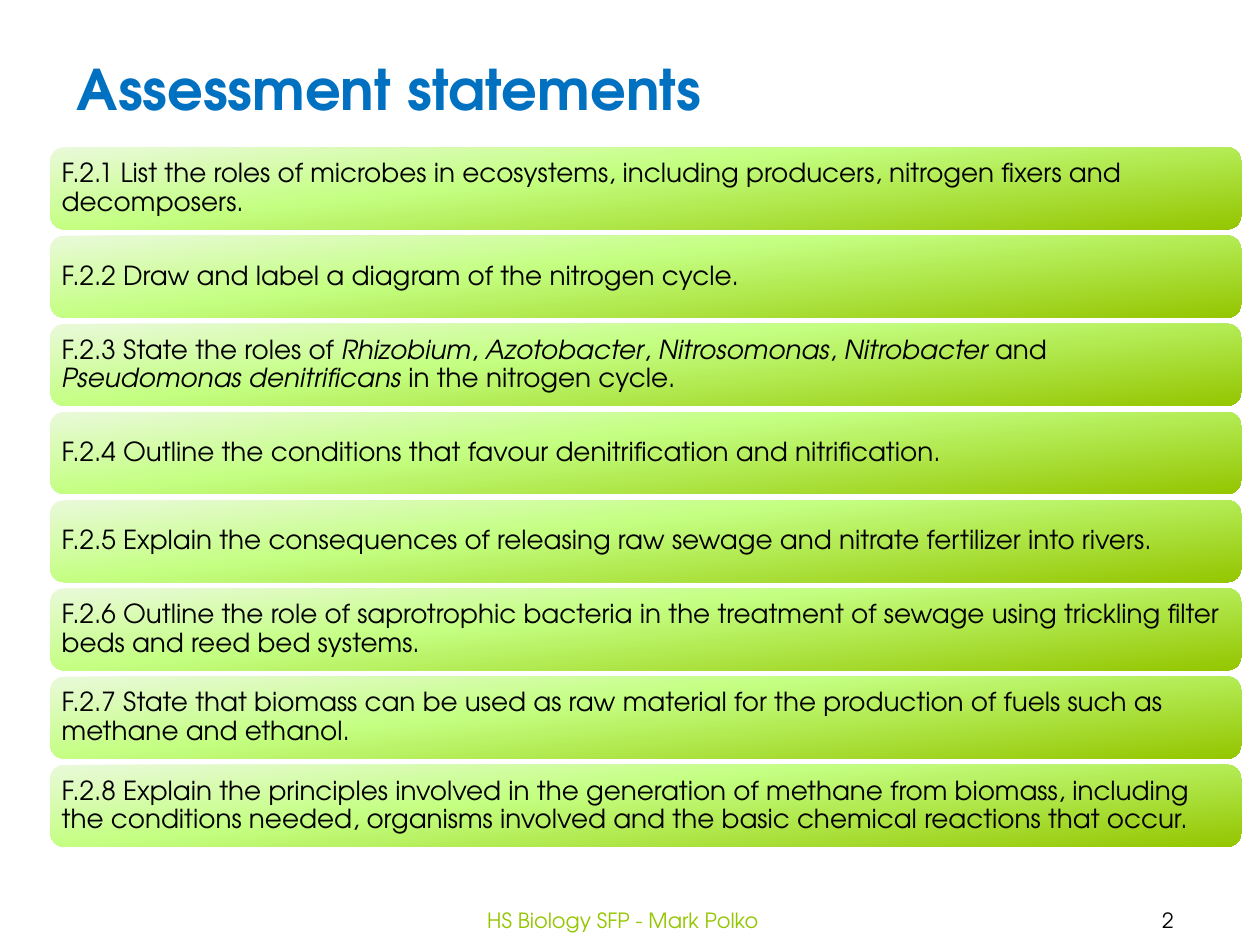
from lxml.etree import SubElement
from pptx import Presentation
from pptx.dml.color import RGBColor
from pptx.enum.shapes import MSO_SHAPE as Shape
from pptx.enum.text import MSO_ANCHOR as Anchor, MSO_AUTO_SIZE as AutoSize, PP_ALIGN as Align
from pptx.oxml.ns import qn
from pptx.util import Inches, Pt

FONT = "TeX Gyre Adventor"
BLACK = RGBColor(0x00, 0x00, 0x00)
BLUE = RGBColor(0x00, 0x70, 0xC0)
PALE = RGBColor(0xEA, 0xF9, 0xDA)
LIME = RGBColor(0xC4, 0xFF, 0x82)
GREEN = RGBColor(0x94, 0xC6, 0x00)
GRADIENT = [(0, PALE), (40, LIME), (100, GREEN)]
GRADIENT_ANGLE = 84  # degrees, clockwise

# Grid of the statement bars, in inches
LEFT, TOP, WIDTH, HEIGHT, PITCH = 0.4, 1.17, 9.45, 0.65, 0.7
INSET = 0.03

# Each statement is a list of runs; every second run is italic
STATEMENTS = [
    ["F.2.1 List the roles of microbes in ecosystems, including producers, "
     "nitrogen fixers and decomposers."],
    ["F.2.2 Draw and label a diagram of the nitrogen cycle."],
    ["F.2.3 State the roles of ", "Rhizobium", ", ", "Azotobacter", ", ",
     "Nitrosomonas", ", ", "Nitrobacter ", "and ",
     "Pseudomonas denitrificans ", "in the nitrogen cycle."],
    ["F.2.4 Outline the conditions that favour denitrification and nitrification."],
    ["F.2.5 Explain the consequences of releasing raw sewage and nitrate "
     "fertilizer into rivers."],
    ["F.2.6 Outline the role of saprotrophic bacteria in the treatment of sewage "
     "using trickling filter beds and reed bed systems."],
    ["F.2.7 State that biomass can be used as raw material for the production of "
     "fuels such as methane and ethanol."],
    ["F.2.8 Explain the principles involved in the generation of methane from "
     "biomass, including the conditions needed, organisms involved and the basic "
     "chemical reactions that occur."],
]


def add_run(para, text, size, color, bold=False, italic=False):
    span = para.add_run()
    span.text = text
    font = span.font
    font.name, font.size, font.bold, font.italic = FONT, Pt(size), bold, italic
    font.color.rgb = color


def add_box(shapes, left, top, width, height, anchor=Anchor.MIDDLE):
    box = shapes.add_textbox(*map(Inches, (left, top, width, height)))
    box.text_frame.word_wrap = True
    box.text_frame.vertical_anchor = anchor
    return box.text_frame


def add_title(page, text):
    frame = add_box(page.shapes, 0.51, 0.38, 5.22, 0.64, Anchor.TOP)
    frame.word_wrap = False
    frame.auto_size = AutoSize.SHAPE_TO_FIT_TEXT
    add_run(frame.paragraphs[0], text, 32, BLUE, bold=True)


def add_footer(page, left, width, text, color):
    para = add_box(page.shapes, left, 7.1, width, 0.4).paragraphs[0]
    para.alignment = Align.CENTER
    add_run(para, text, 12, color)


def fill_gradient(shape):
    shape.fill.gradient()
    shape.fill.gradient_angle = 360 - GRADIENT_ANGLE
    stops = shape.fill._fill._gradFill.find(qn("a:gsLst"))
    for stop in list(stops):
        stops.remove(stop)
    for percent, color in GRADIENT:
        stop = SubElement(stops, qn("a:gs"), pos=str(percent * 1000))
        SubElement(stop, qn("a:srgbClr"), val=str(color))


def add_statement(shapes, row, runs):
    top = TOP + row * PITCH
    bar = shapes.add_shape(Shape.ROUNDED_RECTANGLE,
                           *map(Inches, (LEFT, top, WIDTH, HEIGHT)))
    bar.shadow.inherit = False
    bar.line.fill.background()
    fill_gradient(bar)

    frame = add_box(shapes, LEFT + INSET, top + INSET,
                    WIDTH - 2 * INSET, HEIGHT - 2 * INSET)
    frame.margin_left = frame.margin_right = Inches(0.06)
    frame.margin_top = frame.margin_bottom = Inches(0.06)
    para = frame.paragraphs[0]
    para.line_spacing = 0.9
    for index, text in enumerate(runs):
        add_run(para, text, 15, BLACK, italic=index % 2 == 1)


def main():
    deck = Presentation()
    deck.slide_width, deck.slide_height = Inches(10), Inches(7.5)
    page = deck.slides.add_slide(deck.slide_layouts[6])

    # Page number, footer and title
    add_footer(page, 8.54, 1.46, "2", BLACK)
    add_footer(page, 3.03, 3.83, "HS Biology SFP - Mark Polko", GREEN)
    add_title(page, "Assessment statements")

    # Stack of statement bars
    stack = page.shapes.add_group_shape()
    for row, runs in enumerate(STATEMENTS):
        add_statement(stack.shapes, row, runs)

    deck.save("out.pptx")


if __name__ == "__main__":
    main()
